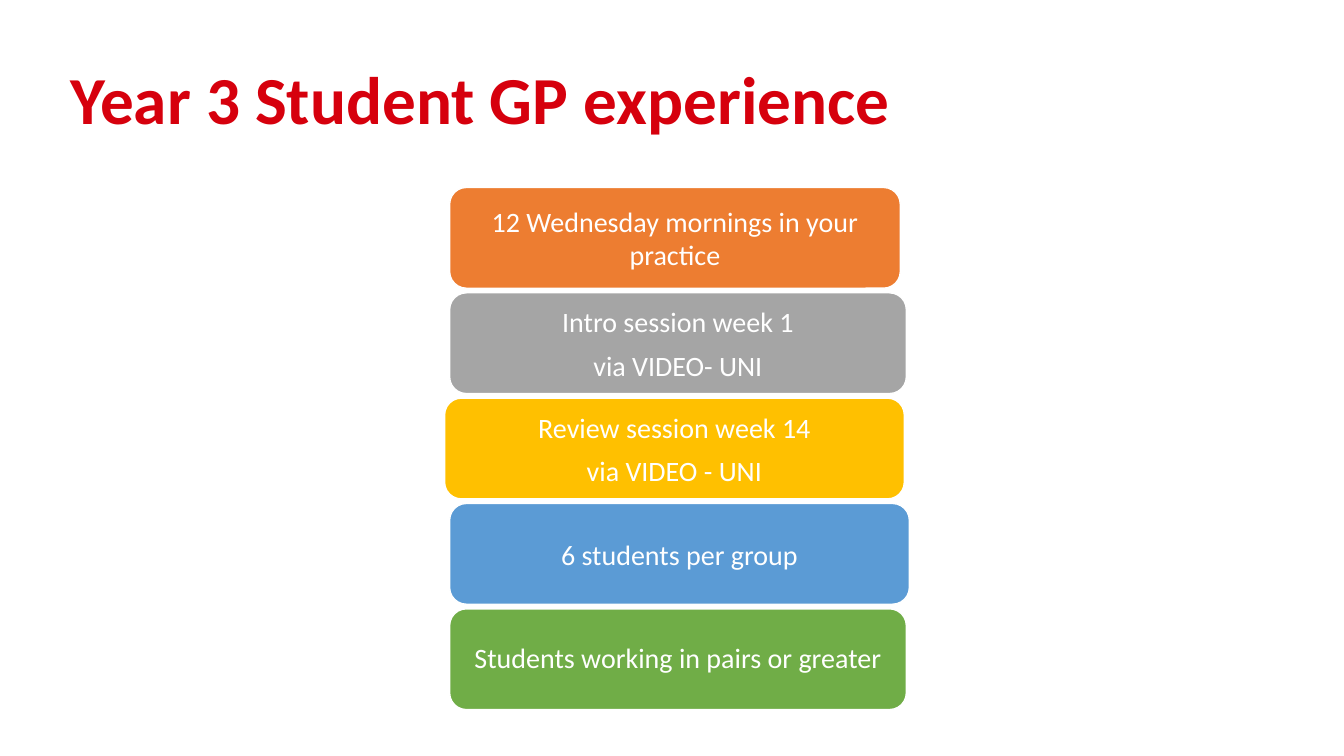
from pptx import Presentation
from pptx.dml.color import RGBColor
from pptx.enum.shapes import MSO_SHAPE
from pptx.enum.text import MSO_ANCHOR, MSO_AUTO_SIZE, PP_ALIGN
from pptx.util import Inches, Pt

ROUNDED = MSO_SHAPE.ROUNDED_RECTANGLE
TOP, MIDDLE = MSO_ANCHOR.TOP, MSO_ANCHOR.MIDDLE
LEFT, CENTER = PP_ALIGN.LEFT, PP_ALIGN.CENTER
NO_FIT = MSO_AUTO_SIZE.NONE

WHITE = RGBColor(0xFF, 0xFF, 0xFF)
RED = RGBColor(0xD6, 0x00, 0x0D)
ORANGE = RGBColor(0xED, 0x7D, 0x31)
GREY = RGBColor(0xA5, 0xA5, 0xA5)
GOLD = RGBColor(0xFF, 0xC0, 0x00)
BLUE = RGBColor(0x5B, 0x9B, 0xD5)
GREEN = RGBColor(0x70, 0xAD, 0x47)

FONT = "Calibri"
STACK_TOP, STACK_BOTTOM = 1.86, 7.04
BAR_HEIGHT = 1.0

# left, width, fill, line spacing, lines of text
BARS = [
    (4.46, 4.47, ORANGE, 1.0, ["12 Wednesday mornings in your practice"]),
    (4.46, 4.53, GREY, 1.0, ["Intro session week 1", "via VIDEO- UNI"]),
    (4.41, 4.56, GOLD, 1.0, ["Review session week 14", "via VIDEO - UNI"]),
    (4.46, 4.56, BLUE, 1.0, ["6 students per group"]),
    (4.46, 4.53, GREEN, 0.9, ["Students working in pairs or greater"]),
]

TITLE_FRAME = {"vertical_anchor": TOP, "word_wrap": True, "auto_size": NO_FIT}
TITLE_PARAGRAPH = {"alignment": LEFT, "line_spacing": 0.9,
                   "space_before": Pt(10)}
TITLE_FONT = {"name": FONT, "size": Pt(48), "bold": True}
BAR_FRAME = {
    "vertical_anchor": MIDDLE, "word_wrap": True, "auto_size": NO_FIT,
    "margin_left": Inches(0.08), "margin_right": Inches(0.08),
    "margin_top": Inches(0.04), "margin_bottom": Inches(0.04),
}
BAR_PARAGRAPH = {"alignment": CENTER, "space_after": Pt(7)}
BAR_FONT = {"name": FONT, "size": Pt(20)}


def apply(target, values):
    for name, value in values.items():
        setattr(target, name, value)


def write(tf, lines, frame, paragraph, font, color):
    """Fill a text frame with one formatted paragraph per line."""
    apply(tf, frame)
    for i, line in enumerate(lines):
        p = tf.add_paragraph() if i else tf.paragraphs[0]
        apply(p, paragraph)
        r = p.add_run()
        r.text = line
        apply(r.font, font)
        r.font.color.rgb = color


def set_title(slide, text):
    sp = slide.shapes.title
    apply(sp, {"left": Inches(0.6), "top": Inches(0.61),
               "width": Inches(11.35), "height": Inches(1.27)})
    write(sp.text_frame, [text], TITLE_FRAME, TITLE_PARAGRAPH, TITLE_FONT, RED)


def add_bar(slide, left, top, width, fill, line_spacing, lines):
    sp = slide.shapes.add_shape(ROUNDED, Inches(left), Inches(top),
                                Inches(width), Inches(BAR_HEIGHT))
    sp.shadow.inherit = False
    sp.fill.solid()
    sp.fill.fore_color.rgb = fill
    sp.line.color.rgb = WHITE
    sp.line.width = Pt(1)
    paragraph = {**BAR_PARAGRAPH, "line_spacing": line_spacing}
    write(sp.text_frame, lines, BAR_FRAME, paragraph, BAR_FONT, WHITE)


def main():
    prs = Presentation()
    prs.slide_width, prs.slide_height = Inches(13.33), Inches(7.5)
    slide = prs.slides.add_slide(prs.slide_layouts.get_by_name("Title Only"))
    set_title(slide, "Year 3 Student GP experience")
    pitch = (STACK_BOTTOM - STACK_TOP - BAR_HEIGHT) / (len(BARS) - 1)
    for row, (left, *rest) in enumerate(BARS):
        add_bar(slide, left, STACK_TOP + row * pitch, *rest)
    prs.save("out.pptx")


if __name__ == "__main__":
    main()
